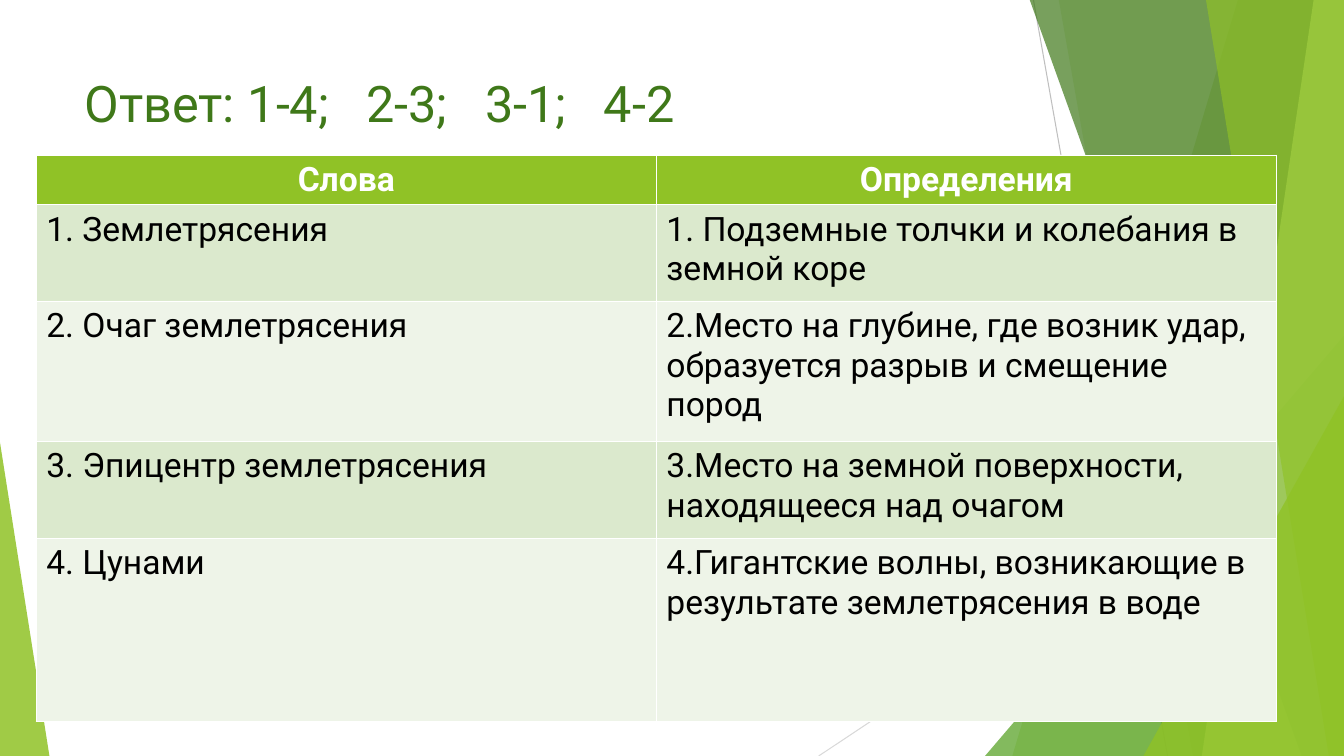
from pptx import Presentation
from pptx.dml.color import RGBColor
from pptx.enum.shapes import MSO_CONNECTOR, MSO_SHAPE
from pptx.enum.text import MSO_ANCHOR, MSO_AUTO_SIZE, PP_ALIGN
from pptx.oxml.ns import qn
from pptx.util import Inches, Pt
from lxml import etree

FONT = "Roboto"
WHITE = RGBColor(0xFF, 0xFF, 0xFF)
BLACK = RGBColor(0x00, 0x00, 0x00)
LIME = RGBColor(0x90, 0xC2, 0x26)
GREEN = RGBColor(0x54, 0xA0, 0x21)
DARK_GREEN = RGBColor(0x3F, 0x78, 0x19)
PALE_LIME = RGBColor(0xC0, 0xE4, 0x74)
BAND_DARK = RGBColor(0xDB, 0xE9, 0xCD)
BAND_LIGHT = RGBColor(0xEE, 0xF4, 0xE8)
GRAY = RGBColor(0xBF, 0xBF, 0xBF)
LIGHT_GRAY = RGBColor(0xD9, 0xD9, 0xD9)


def paint(shape, color, opacity):
    shape.shadow.inherit = False
    shape.line.fill.background()
    shape.fill.solid()
    shape.fill.fore_color.rgb = color
    color_element = shape.fill._xPr.find(qn("a:solidFill"))[0]
    etree.SubElement(color_element, qn("a:alpha")).set("val", str(opacity * 1000))


def add_run(paragraph, text, size, color, bold=False):
    run = paragraph.add_run()
    run.text = text
    run.font.name = FONT
    run.font.size = Pt(size)
    run.font.bold = bold
    run.font.color.rgb = color


presentation = Presentation()
presentation.slide_width = Inches(13.33)
presentation.slide_height = Inches(7.5)
slide = presentation.slides.add_slide(presentation.slide_layouts[5])

thin_lines = [
    (10.25, 0, 11.58, 7.5, GRAY),
    (13.33, 4.03, 8.12, 7.5, LIGHT_GRAY),
]
for *ends, color in thin_lines:
    connector = slide.shapes.add_connector(MSO_CONNECTOR.STRAIGHT, *map(Inches, ends))
    connector.line.color.rgb = color
    connector.line.width = Pt(0.75)
    etree.SubElement(connector._element.spPr, qn("a:effectLst"))

facets = [
    ("band", (12.28, 10.04), LIME, 30),
    ("band", (10.5, 11.83), LIME, 20),
    ("triangle", (9.77, 3.33, 3.56, 4.17, 1), GREEN, 72),
    ("band", (10.21, 12.91), DARK_GREEN, 70),
    ("band", (13.03, 11.92), PALE_LIME, 70),
    ("band", (11.96, 13.18), LIME, 65),
    ("triangle", (11.34, 3.93, 1.99, 3.57, 1), LIME, 80),
    ("triangle", (0, 4.39, 0.49, 3.11, 0), LIME, 85),
]
for kind, geometry, color, opacity in facets:
    if kind == "band":
        top_x, bottom_x = geometry
        corners = [(13.33, -0.01), (13.33, 7.5), (bottom_x, 7.5)]
        builder = slide.shapes.build_freeform(Inches(top_x), Inches(-0.01))
        builder.add_line_segments([(Inches(x), Inches(y)) for x, y in corners])
        shape = builder.convert_to_shape()
    else:
        *box, apex = geometry
        shape = slide.shapes.add_shape(MSO_SHAPE.ISOSCELES_TRIANGLE, *map(Inches, box))
        shape.adjustments[0] = apex
    paint(shape, color, opacity)

title = slide.shapes.title
title.left, title.top = Inches(0.74), Inches(0.67)
title.width, title.height = Inches(9.4), Inches(1.44)
title.text_frame.word_wrap = True
title.text_frame.auto_size = MSO_AUTO_SIZE.NONE
title.text_frame.vertical_anchor = MSO_ANCHOR.TOP
heading = title.text_frame.paragraphs[0]
heading.alignment = PP_ALIGN.LEFT
add_run(heading, "Ответ: 1-4;   2-3;   3-1;   4-2", 36, DARK_GREEN)

rows = [
    (0.47, "Слова", "Определения"),
    (0.96, "1. Землетрясения", "1. Подземные толчки и колебания в земной коре"),
    (1.39, "2. Очаг землетрясения",
     "2.Место на глубине, где возник удар, образуется разрыв и смещение пород"),
    (0.96, "3. Эпицентр землетрясения",
     "3.Место на земной поверхности, находящееся над очагом"),
    (1.82, "4. Цунами",
     "4.Гигантские волны, возникающие в результате землетрясения в воде"),
]
table = slide.shapes.add_table(
    len(rows), 2, Inches(0.36), Inches(1.54), Inches(12.3), Inches(5.6)
).table
for row_index, (height, *texts) in enumerate(rows):
    table.rows[row_index].height = Inches(height)
    is_header = row_index == 0
    band = BAND_DARK if row_index % 2 else BAND_LIGHT
    for column_index, text in enumerate(texts):
        cell = table.cell(row_index, column_index)
        cell.fill.solid()
        cell.fill.fore_color.rgb = LIME if is_header else band
        paragraph = cell.text_frame.paragraphs[0]
        paragraph.alignment = PP_ALIGN.CENTER if is_header else PP_ALIGN.LEFT
        add_run(paragraph, text, 24, WHITE if is_header else BLACK, is_header)

presentation.save("out.pptx")
